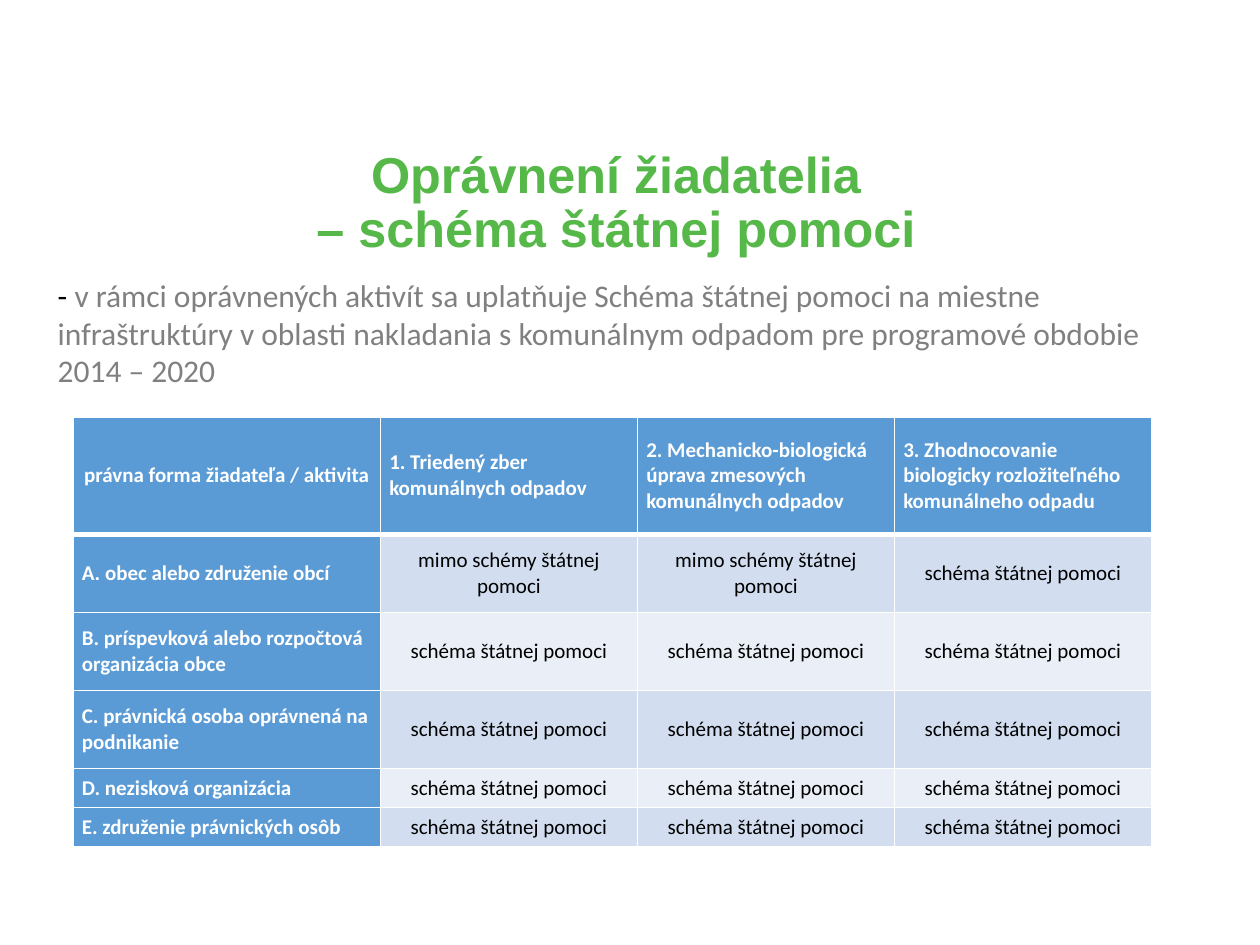
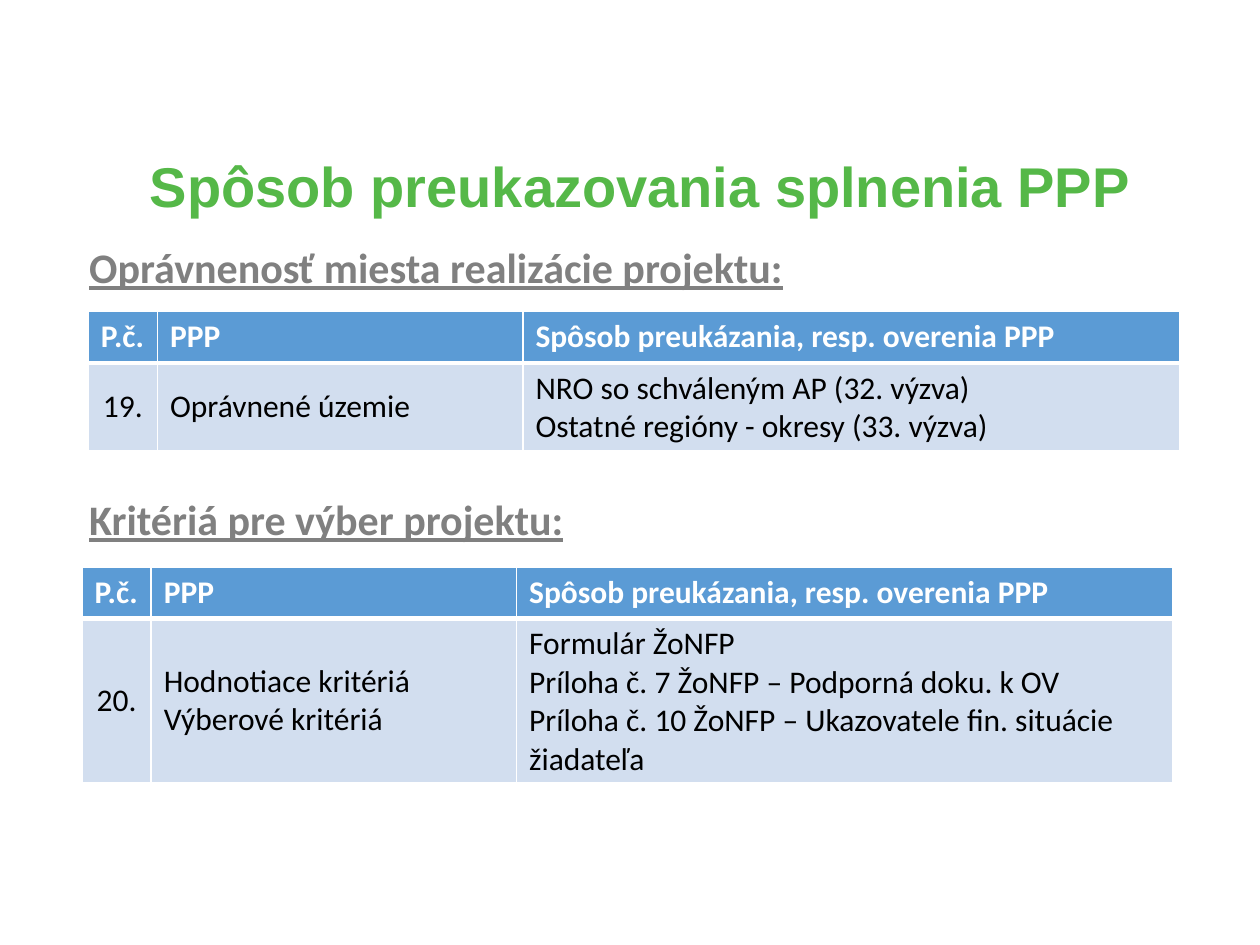
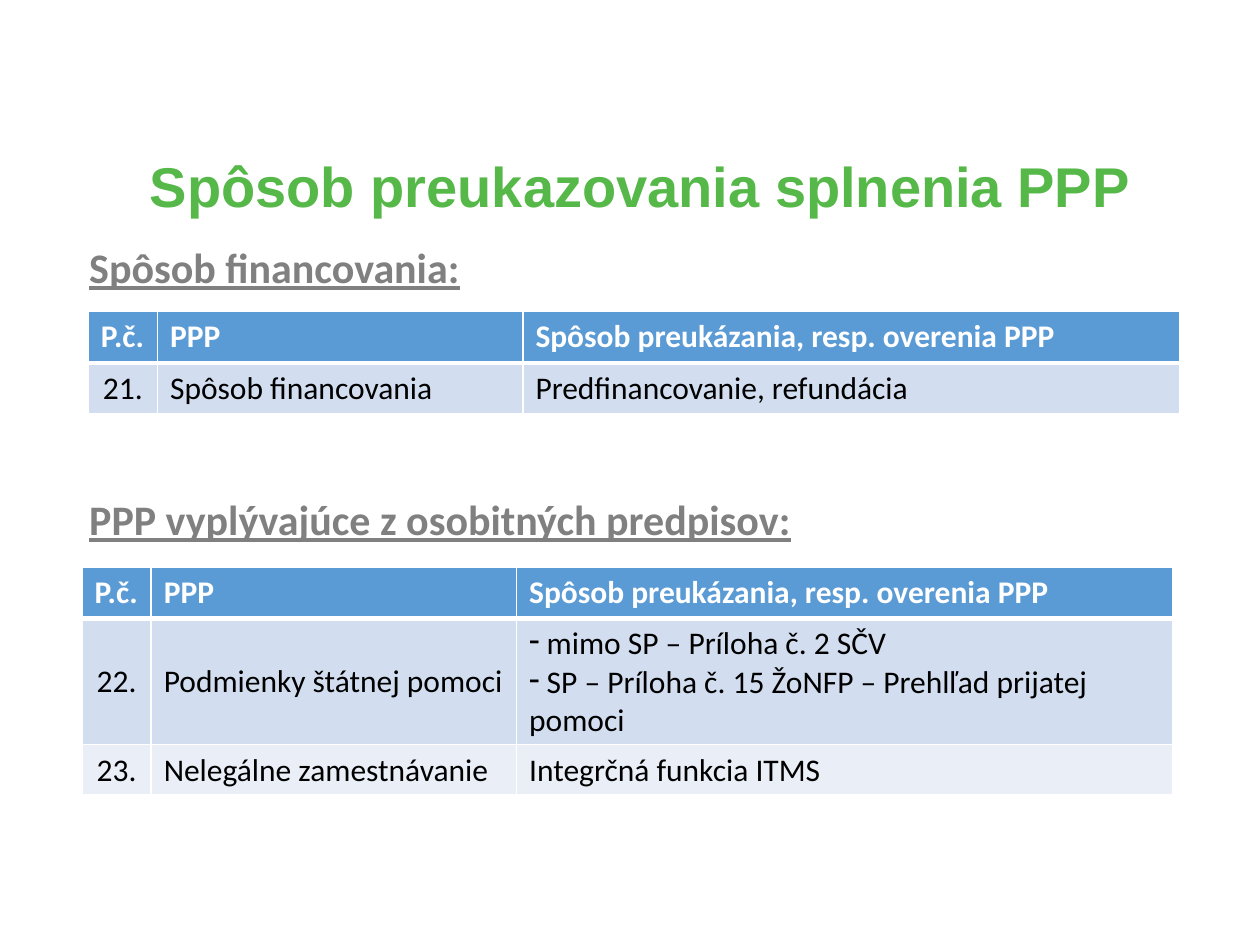
from dataclasses import dataclass

from lxml.etree import SubElement
from pptx import Presentation
from pptx.dml.color import RGBColor
from pptx.enum.text import MSO_ANCHOR, PP_ALIGN
from pptx.oxml.ns import qn
from pptx.util import Pt

PX = 9144  # EMU in one px, at 100 px to the inch


@dataclass(frozen=True)
class Theme:
    green: str = "55B848"
    gray: str = "808080"
    black: str = "000000"
    white: str = "FFFFFF"
    blue: str = "5B9BD5"
    bands: tuple = ("D2DEEF", "EAEFF7")
    head: str = "Arial"
    body: str = "Calibri"
    large: float = 32
    title: float = 28.8
    topic: float = 24
    text: float = 18
    small: float = 12
    thin: float = 1
    thick: float = 3


def px(*nums):
    return [num * PX for num in nums]


def put(frame, *paras, font, size, color, bold=False, line=False,
        align=PP_ALIGN.LEFT, lead=None, gap=0, bullet=None):
    """Fill a frame; a paragraph is a string or a list of (text, color) runs."""
    for num, para in enumerate(paras):
        par = frame.paragraphs[0] if num == 0 else frame.add_paragraph()
        par.alignment = align
        if lead:
            par.line_spacing = lead
        if num and gap:
            par.space_before = Pt(gap)
        if bullet:
            props = par._p.get_or_add_pPr()
            SubElement(props, qn("a:buChar")).set("char", bullet)
        for words, tint in [(para, color)] if isinstance(para, str) else para:
            for row, part in enumerate(words.split("\n")):
                if row:
                    par.add_line_break()
                run = par.add_run()
                run.text = part
                run.font.name = font
                run.font.size = Pt(size)
                run.font.bold = bold
                run.font.underline = line
                run.font.color.rgb = RGBColor.from_string(tint)


def edge(cell, color, widths):
    """Draw the left, right, top and bottom borders of a cell."""
    props = cell._tc.get_or_add_tcPr()
    for num, (side, width) in enumerate(zip("LRTB", widths)):
        line = props.makeelement(qn(f"a:ln{side}"), {"w": str(Pt(width))})
        fill = SubElement(line, qn("a:solidFill"))
        SubElement(fill, qn("a:srgbClr")).set("val", color)
        props.insert(num, line)


class Deck:
    def __init__(self, theme):
        self.theme = theme
        self.prs = Presentation()
        self.prs.slide_width, self.prs.slide_height = px(1000, 750)
        self.slide = None

    def page(self):
        self.slide = self.prs.slides.add_slide(self.prs.slide_layouts[6])

    def box(self, area, *paras, anchor=MSO_ANCHOR.TOP, **form):
        frame = self.slide.shapes.add_textbox(*px(*area)).text_frame
        frame.word_wrap = True
        frame.vertical_anchor = anchor
        put(frame, *paras, **form)

    def title(self, area, text, size):
        self.box(area, text, anchor=MSO_ANCHOR.MIDDLE, font=self.theme.head,
                 size=size, color=self.theme.green, bold=True,
                 align=PP_ALIGN.CENTER, lead=0.9)

    def topics(self, *names):
        self.box((61, 187, 853, 461), *names, font=self.theme.body,
                 size=self.theme.topic, color=self.theme.gray, bold=True,
                 line=True, align=PP_ALIGN.JUSTIFY, gap=115)

    def table(self, left, top, cols, rows, data, size, mid, side=False,
              pad=None):
        """Place a table; mid holds the centred cells, side marks a head column."""
        look = self.theme
        grid = self.slide.shapes.add_table(
            len(rows), len(cols), *px(left, top, sum(cols), sum(rows))).table
        grid.horz_banding = False
        for col, wide in zip(grid.columns, px(*cols)):
            col.width = wide
        for row, high in zip(grid.rows, px(*rows)):
            row.height = high
        for y, line in enumerate(data):
            for x, item in enumerate(line):
                cell = grid.cell(y, x)
                head = y == 0 or (side and x == 0)
                fill = look.blue if head else look.bands[(y - 1) % 2]
                cell.fill.solid()
                cell.fill.fore_color.rgb = RGBColor.from_string(fill)
                edge(cell, look.white,
                     (look.thin, look.thin,
                      look.thick if y == 1 else look.thin,
                      look.thick if y == 0 else look.thin))
                if pad:
                    cell.margin_left = cell.margin_right = pad * PX
                    cell.margin_top = cell.margin_bottom = 0
                if y or side:
                    cell.vertical_anchor = MSO_ANCHOR.MIDDLE
                paras = [item] if isinstance(item, str) else item
                dash = all(para.startswith("- ") for para in paras)
                if dash:
                    paras = [para[1:] for para in paras]
                put(cell.text_frame, *paras, font=look.body, size=size,
                    color=look.white if head else look.black, bold=head,
                    bullet="-" if dash else None,
                    align=PP_ALIGN.CENTER if mid(y, x) else PP_ALIGN.LEFT)

    def proof(self, left, top, rows, *data):
        """Place a table of conditions and how each is proved."""
        head = ("P.č.", "PPP", "Spôsob preukázania, resp. overenia PPP")
        self.table(left, top, (55, 290, 521), (41, *rows), (head, *data),
                   self.theme.text, lambda y, x: y > 0 and x == 0)

    def proofs(self, topics, first, second):
        """Build a page with two topics, each followed by its table."""
        self.page()
        self.title((61, 102, 895, 96), "Spôsob preukazovania splnenia PPP",
                   self.theme.large)
        self.topics(*topics)
        self.proof(70, 247, *first)
        self.proof(65, 450, *second)


def scheme(deck):
    look = deck.theme
    deck.page()
    deck.title((45, 119, 899, 86),
               "Oprávnení žiadatelia \n– schéma štátnej pomoci ", look.title)
    aid = "schéma štátnej pomoci"
    none = "mimo schémy štátnej pomoci"
    data = [
        ("právna forma žiadateľa / aktivita",
         "1. Triedený zber komunálnych odpadov",
         "2. Mechanicko-biologická úprava zmesových komunálnych odpadov",
         "3. Zhodnocovanie biologicky rozložiteľného komunálneho odpadu"),
        ("A. obec alebo združenie obcí", none, none, aid),
    ]
    data += [(name, aid, aid, aid) for name in (
        "B. príspevková alebo rozpočtová organizácia obce",
        "C. právnická osoba oprávnená na podnikanie",
        "D. nezisková organizácia",
        "E. združenie právnických osôb")]
    deck.table(58, 331, (244, 204, 204, 204), (93, 62, 62, 62, 31, 31), data,
               look.small, lambda y, x: (y > 0) == (x > 0), side=True, pad=7)
    deck.box((36, 214, 932, 101),
             [("- ", look.black),
              ("v rámci oprávnených aktivít sa uplatňuje Schéma štátnej pomoci "
               "na miestne infraštruktúry v oblasti nakladania s komunálnym "
               "odpadom pre programové obdobie 2014 – 2020", look.gray)],
             font=look.body, size=look.text, color=look.gray)


def main():
    deck = Deck(Theme())
    scheme(deck)
    deck.proofs(
        ("Oprávnenosť miesta realizácie projektu:",
         "Kritériá pre výber projektu:"),
        ((70,), ("19.", "Oprávnené územie",
                 ("NRO so schváleným AP (32. výzva)",
                  "Ostatné regióny - okresy (33. výzva)"))),
        ((130,), ("20.", ("Hodnotiace kritériá", "Výberové kritériá"),
                  ("Formulár ŽoNFP",
                   "Príloha č. 7 ŽoNFP – Podporná doku. k OV",
                   "Príloha č. 10 ŽoNFP – Ukazovatele fin. situácie žiadateľa"))))
    deck.proofs(
        ("Spôsob financovania:", "PPP vyplývajúce z osobitných predpisov:"),
        ((40,), ("21.", "Spôsob financovania", "Predfinancovanie, refundácia")),
        ((100, 40),
         ("22.", "Podmienky štátnej pomoci",
          ("- mimo SP – Príloha č. 2 SČV",
           "- SP – Príloha č. 15 ŽoNFP – Prehlľad prijatej pomoci")),
         ("23.", "Nelegálne zamestnávanie", "Integrčná funkcia ITMS")))
    deck.prs.save("out.pptx")


if __name__ == "__main__":
    main()
